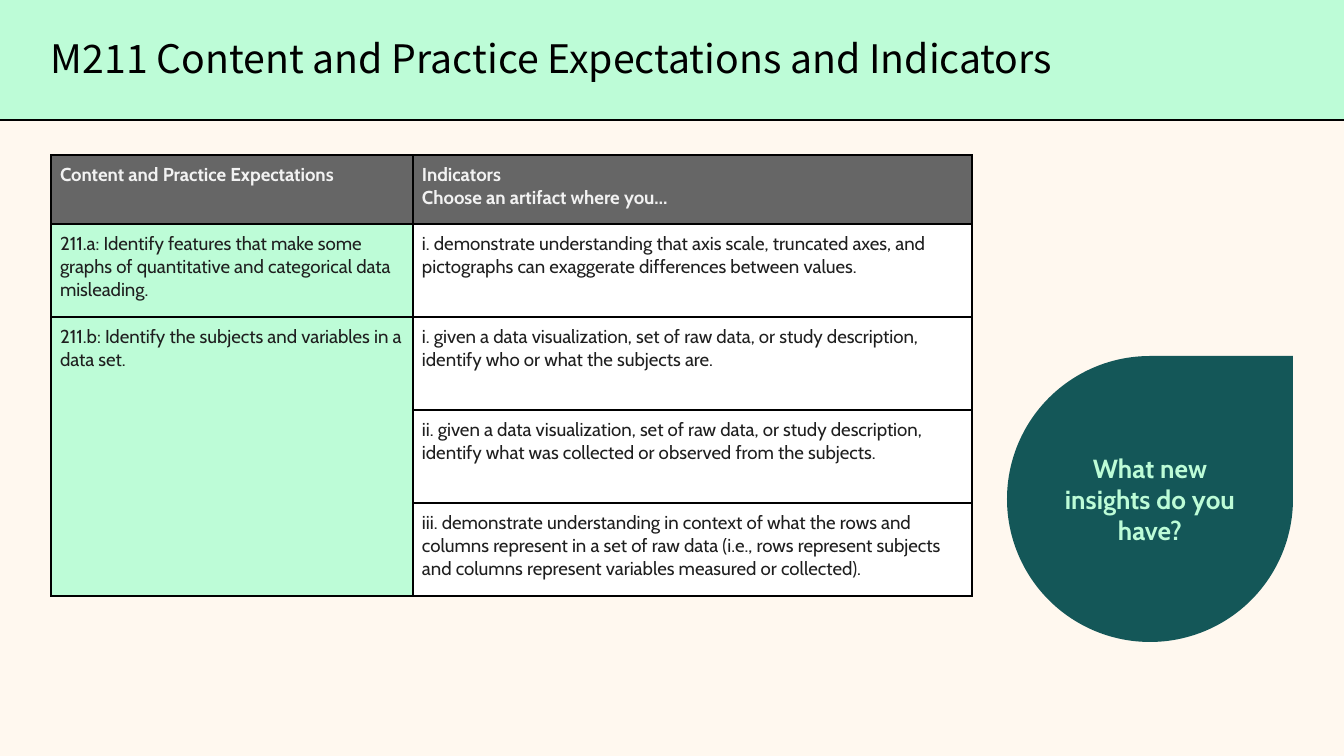
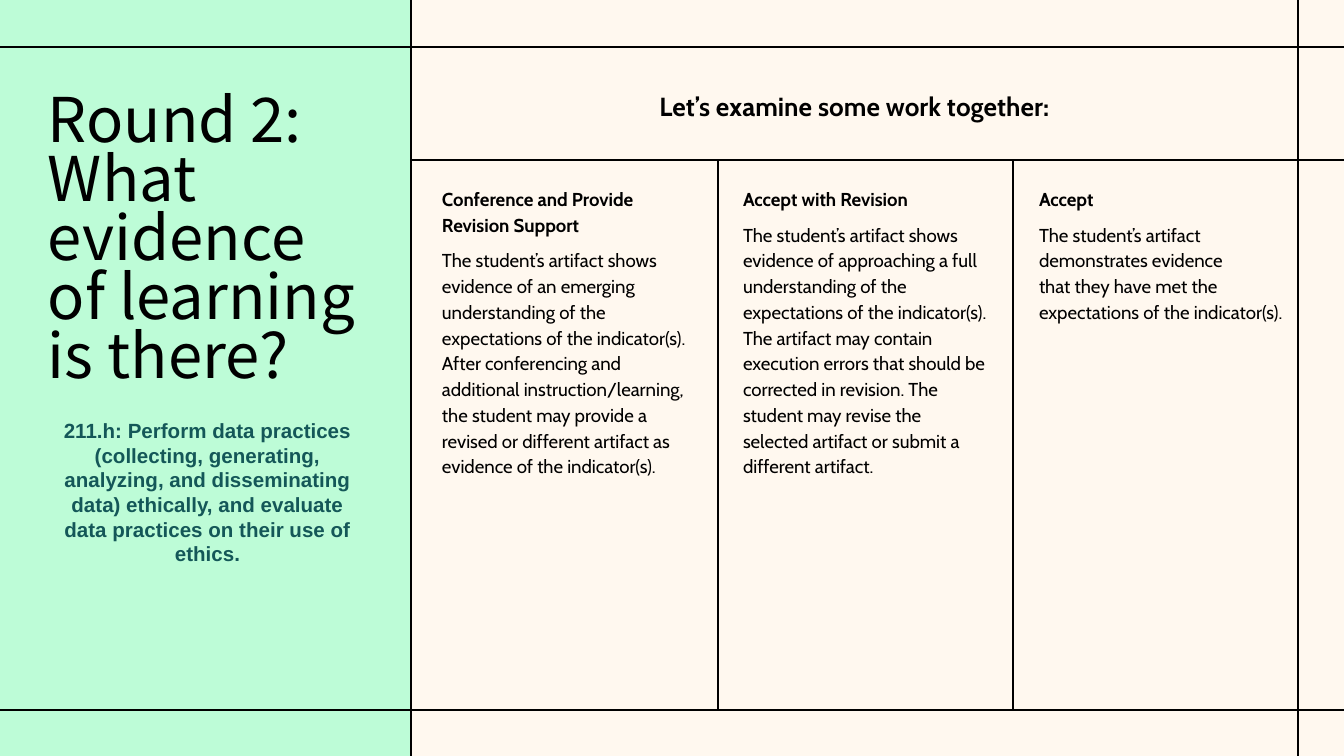
from copy import deepcopy
from dataclasses import dataclass

from lxml import etree
from pptx import Presentation
from pptx.dml.color import RGBColor
from pptx.enum.shapes import MSO_CONNECTOR, MSO_SHAPE
from pptx.enum.text import MSO_AUTO_SIZE, PP_ALIGN
from pptx.oxml.ns import qn
from pptx.util import Emu, Pt

RECT, TEARDROP = MSO_SHAPE.RECTANGLE, MSO_SHAPE.TEAR
STRAIGHT = MSO_CONNECTOR.STRAIGHT
CENTER = PP_ALIGN.CENTER
GROW = MSO_AUTO_SIZE.SHAPE_TO_FIT_TEXT

SLIDE_W, SLIDE_H = 1344, 756
EMU_PER_PX = 9144000 / SLIDE_W


@dataclass(frozen=True)
class Theme:
    cream: str = "FFF8EF"
    mint: str = "BDFCD7"
    teal: str = "145758"
    black: str = "000000"
    white: str = "FFFFFF"
    header: str = "666666"
    header_text: str = "F2F2F2"
    cell_text: str = "1F1F1F"
    title_font: str = "Noto Sans CJK KR"
    body_font: str = "Cabin"
    standard_font: str = "Arial"
    band_title: int = 21
    panel_title: int = 33
    lead: int = 14
    standard: int = 11
    body: int = 10
    rule: float = 0.75
    border: int = 1


T = Theme()
BODY = dict(name=T.body_font, size=T.body, color=T.black, bold=False)
BODY_BOLD = {**BODY, "bold": True}
LEAD = {**BODY_BOLD, "size": T.lead}
BAND_TITLE = dict(name=T.title_font, size=T.band_title, color=T.black)
PANEL_TITLE = {**BAND_TITLE, "size": T.panel_title}
STANDARD = dict(name=T.standard_font, size=T.standard, color=T.teal, bold=True)
HEADER_CELL = {**BODY_BOLD, "color": T.header_text}
BODY_CELL = {**BODY, "color": T.cell_text}

EXPECTATIONS = [
    ("Content and Practice Expectations",
     "Indicators\nChoose an artifact where you…"),
    ("211.a: Identify features that make some graphs of quantitative and "
     "categorical data misleading.",
     "i. demonstrate understanding that axis scale, truncated axes, and "
     "pictographs can exaggerate differences between values."),
    ("211.b: Identify the subjects and variables in a data set.",
     "i. given a data visualization, set of raw data, or study description, "
     "identify who or what the subjects are."),
    ("",
     "ii. given a data visualization, set of raw data, or study description, "
     "identify what was collected or observed from the subjects."),
    ("",
     "iii. demonstrate understanding in context of what the rows and columns "
     "represent in a set of raw data (i.e., rows represent subjects and "
     "columns represent variables measured or collected)."),
]

# left edge, text height, heading, description
OUTCOMES = [
    (442, 344, "Conference and Provide Revision Support",
     "The student’s artifact shows evidence of an emerging understanding of "
     "the expectations of the indicator(s). After conferencing and additional "
     "instruction/learning, the student may provide a revised or different "
     "artifact as evidence of the indicator(s)."),
    (743, 319, "Accept with Revision",
     "The student’s artifact shows evidence of approaching a full "
     "understanding of the expectations of the indicator(s). The artifact may "
     "contain execution errors that should be corrected in revision. The "
     "student may revise the selected artifact or submit a different "
     "artifact."),
    (1039, 163, "Accept",
     "The student’s artifact demonstrates evidence \nthat they have met the "
     "expectations of the indicator(s)."),
]


def px(n):
    return Emu(round(n * EMU_PER_PX))


def rgb(color):
    return RGBColor.from_string(color)


def set_fill(target, color):
    target.fill.solid()
    target.fill.fore_color.rgb = rgb(color)


def style_font(font, style):
    for key, value in style.items():
        if key == "color":
            font.color.rgb = rgb(value)
        else:
            setattr(font, key, Pt(value) if key == "size" else value)


def write_paragraph(p, text, style, **layout):
    """Fill a paragraph; a newline in the text becomes a line break."""
    p.text = text
    for r in p.runs:
        style_font(r.font, style)
    for br in p._p.findall(qn("a:br")):
        br.append(deepcopy(p.runs[0].font._rPr))
    for key, value in layout.items():
        setattr(p, key, value)


def add_text(slide, box, paragraphs):
    """Place a text box holding (text, style, layout) paragraphs."""
    tf = slide.shapes.add_textbox(*map(px, box)).text_frame
    tf.word_wrap = True
    tf.auto_size = GROW
    tf.margin_left = tf.margin_top = tf.margin_right = tf.margin_bottom = 0
    for i, (text, style, layout) in enumerate(paragraphs):
        p = tf.add_paragraph() if i else tf.paragraphs[0]
        write_paragraph(p, text, style, **layout)


def add_block(slide, preset, box, color):
    sp = slide.shapes.add_shape(preset, *map(px, box))
    sp.shadow.inherit = False
    set_fill(sp, color)
    sp.line.fill.background()


def add_rule(slide, x1, y1, x2, y2):
    line = slide.shapes.add_connector(STRAIGHT, *map(px, (x1, y1, x2, y2)))
    line.line.color.rgb = rgb(T.black)
    line.line.width = Pt(T.rule)
    etree.SubElement(line._element.spPr, qn("a:effectLst"))


def border_cell(cell):
    tcPr = cell._tc.get_or_add_tcPr()
    for i, side in enumerate(("lnL", "lnR", "lnT", "lnB")):
        ln = etree.Element(qn(f"a:{side}"), w=str(Pt(T.border)))
        fill = etree.SubElement(ln, qn("a:solidFill"))
        etree.SubElement(fill, qn("a:srgbClr"), val=T.black)
        tcPr.insert(i, ln)


def title_band(slide, box, title):
    x, y, w, h = box
    add_block(slide, RECT, box, T.mint)
    add_text(slide, (x + 51, y + 40, w - 91, 43),
             [(title, BAND_TITLE, dict(line_spacing=0.9))])
    add_rule(slide, x + w, y + h, x, y + h)


def question_drop(slide, box, question):
    x, y, w, h = box
    add_block(slide, TEARDROP, box, T.teal)
    add_text(slide, (x + 41, y + 96, w - 82, h - 191),
             [(question, {**LEAD, "color": T.mint}, dict(alignment=CENTER))])


def expectations_table(slide, box, rows):
    w, h = box[2:]
    first_col, header_h, margin = 362, 69, px(9)
    table = slide.shapes.add_table(len(rows), 2, *map(px, box)).table
    for col, width in zip(table.columns, (first_col, w - first_col)):
        col.width = px(width)
    for i, row in enumerate(table.rows):
        row.height = px((h - header_h) / (len(rows) - 1) if i else header_h)
    for i, texts in enumerate(rows):
        for j, text in enumerate(texts):
            cell = table.cell(i, j)
            cell.margin_left = cell.margin_right = margin
            cell.margin_top = cell.margin_bottom = margin
            set_fill(cell, (T.mint, T.white)[j] if i else T.header)
            border_cell(cell)
            tf = cell.text_frame
            for k, line in enumerate(text.split("\n") if text else []):
                p = tf.add_paragraph() if k else tf.paragraphs[0]
                write_paragraph(p, line, BODY_CELL if i else HEADER_CELL)
    table.cell(2, 0).merge(table.cell(len(rows) - 1, 0))


def round_panel(slide, box, title_lines, standard):
    x, y, w, h = box
    add_block(slide, RECT, box, T.mint)
    add_text(slide, (x + 48, y + 95, w - 92, 298),
             [(s, PANEL_TITLE, dict(line_spacing=0.8)) for s in title_lines])
    add_text(slide, (x + 48, y + 418, w - 92, 146),
             [(standard, STANDARD, dict(alignment=CENTER))])


def frame_rules(slide, box, panel_right, heading_bottom):
    """Draw the rules that cross the slide; the heading rule starts at the panel."""
    x, y, w, h = box
    add_rule(slide, panel_right, heading_bottom, x + w, heading_bottom)
    for row in (y + 47, y + 710):
        add_rule(slide, x, row, x + w, row)
    for col in (panel_right, x + 1298):
        add_rule(slide, col, y, col, y + h)


def outcome_columns(slide, box, outcomes):
    x, y, w, h = box
    for divider in (x + 307, x + 602):
        add_rule(slide, divider, y, divider, y + h)
    for left, height, heading, description in outcomes:
        add_text(slide, (left, y + 25, 246, height), [
            (heading, BODY_BOLD, dict(line_spacing=1.15)),
            (description, BODY, dict(line_spacing=1.15, space_before=Pt(5),
                                     space_after=Pt(5)))])


def add_slide(prs):
    slide = prs.slides.add_slide(prs.slide_layouts[6])
    set_fill(slide.background, T.cream)
    return slide


def expectations_slide(prs):
    slide = add_slide(prs)
    title_band(slide, (0, 0, SLIDE_W, 120),
               "M211 Content and Practice Expectations and Indicators")
    question_drop(slide, (1007, 356, 286, 286), "What new insights do you have?")
    expectations_table(slide, (51, 155, 921, 441), EXPECTATIONS)


def evidence_slide(prs):
    slide = add_slide(prs)
    panel_w, heading_bottom = 411, 160
    round_panel(slide, (0, 0, panel_w, SLIDE_H),
                ["Round 2:", "What evidence of learning is there?"],
                "211.h: Perform data practices (collecting, generating, "
                "analyzing, and disseminating data) ethically, and evaluate "
                "data practices on their use of ethics.")
    frame_rules(slide, (0, 0, SLIDE_W, SLIDE_H), panel_w, heading_bottom)
    add_text(slide, (458, 90, 793, 32),
             [("Let’s examine some work together:", LEAD,
               dict(alignment=CENTER))])
    outcome_columns(slide, (panel_w, heading_bottom, 887, 550), OUTCOMES)


def main():
    prs = Presentation()
    prs.slide_width, prs.slide_height = px(SLIDE_W), px(SLIDE_H)
    expectations_slide(prs)
    evidence_slide(prs)
    prs.save("out.pptx")


if __name__ == "__main__":
    main()
